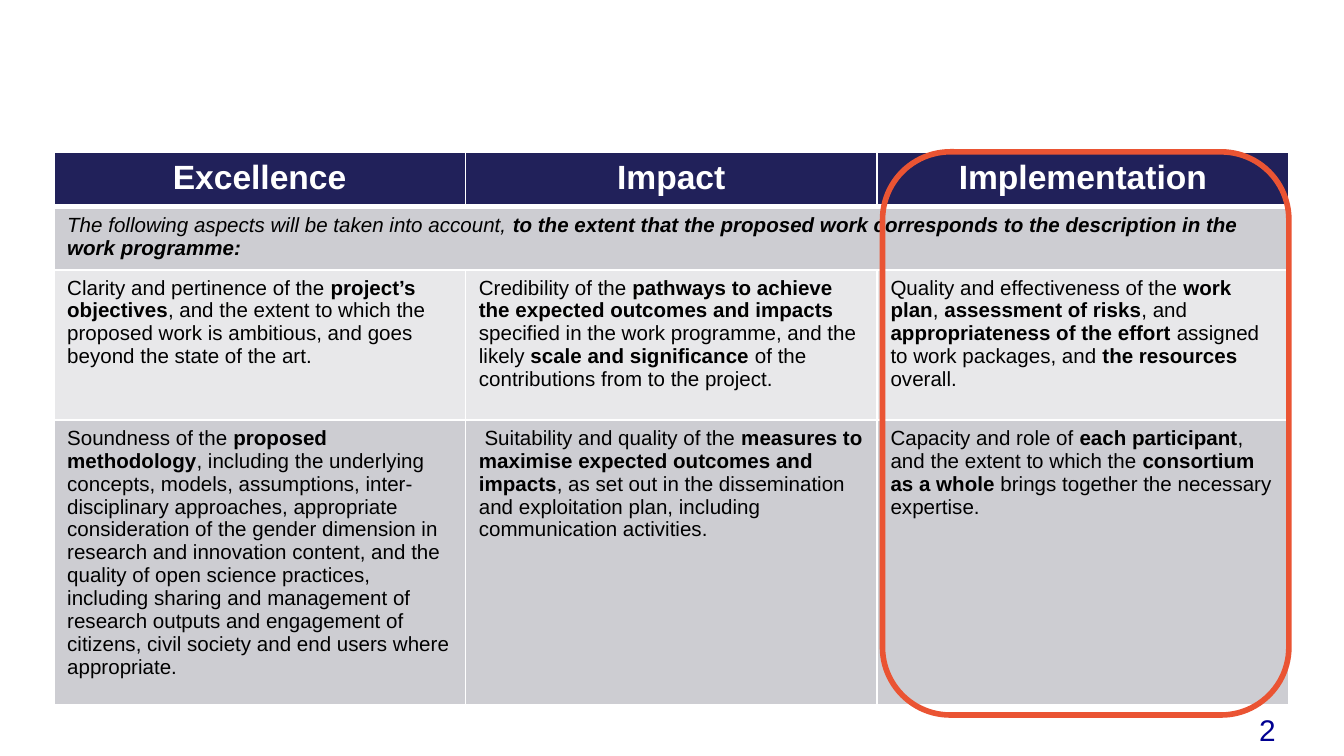
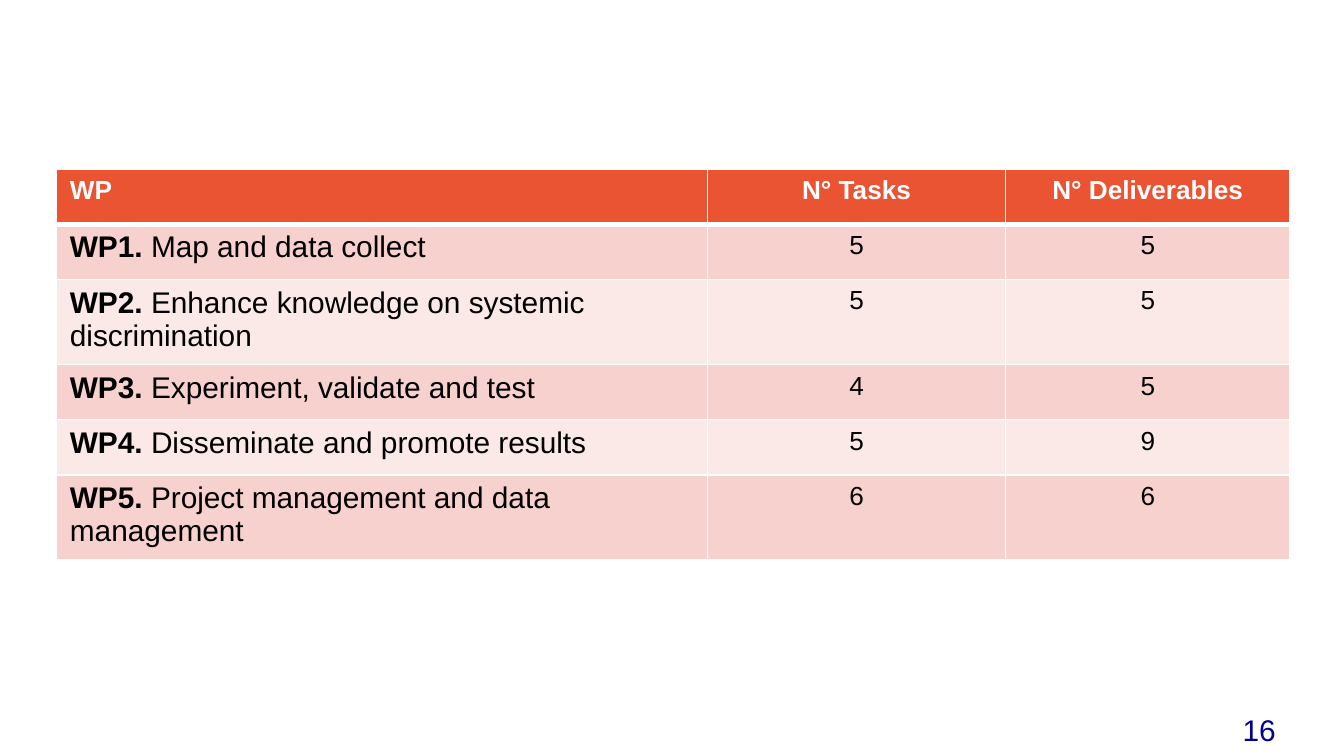
import pptx
import pptx.util
import pptx.dml.color
import pptx.enum.shapes
import pptx.enum.text
import pptx.oxml
import pptx.oxml.ns

Inches, Pt = pptx.util.Inches, pptx.util.Pt
RGBColor = pptx.dml.color.RGBColor
ALIGN = pptx.enum.text.PP_ALIGN
ANCHOR = pptx.enum.text.MSO_ANCHOR

WIDTH = 10
HEIGHT = WIDTH * 9 / 16
FONT = "Arial"
WHITE = RGBColor(0xFF, 0xFF, 0xFF)
BLACK = RGBColor(0, 0, 0)
BLUE = RGBColor(0x00, 0x00, 0x91)
NAVY = RGBColor(0x21, 0x21, 0x5A)
ORANGE = RGBColor(0xEA, 0x54, 0x33)
GREY_BANDS = (RGBColor(0xCD, 0xCD, 0xD2), RGBColor(0xE8, 0xE8, 0xEA))
PINK_BANDS = (RGBColor(0xF7, 0xD1, 0xCE), RGBColor(0xFB, 0xE9, 0xE8))

# Boxes: left, top, width, height in inches
NUMBER_BOX = (8.31, 5.24, 1.28, 0.38)
CRITERIA_BOX = (0.4, 1.13, 9.19, 4.19)
PACKAGES_BOX = (0.42, 1.26, 9.18, 2.89)
ROW = 0.41  # least row height; rows grow with their text

# Double asterisks switch bold on and off
CRITERIA = [
    ["Excellence", "Impact", "Implementation"],
    ["The following aspects will be taken into account, **to the extent that the "
     "proposed work corresponds to the description in the work programme:**"],
    ["Clarity and pertinence of the **project’s objectives**, and the extent to which "
     "the proposed work is ambitious, and goes beyond the state of the art.",
     "Credibility of the **pathways to achieve the expected outcomes and impacts "
     "**specified in the work programme, and the likely **scale and significance "
     "**of the contributions from to the project.",
     "Quality and effectiveness of the **work plan**, **assessment of risks**, and "
     "**appropriateness of the effort** assigned to work packages, and "
     "**the resources** overall."],
    ["Soundness of the **proposed methodology**, including the underlying concepts, "
     "models, assumptions, inter-disciplinary approaches, appropriate consideration of "
     "the gender dimension in research and innovation content, and the quality of open "
     "science practices, including sharing and management of research outputs and "
     "engagement of citizens, civil society and end users where appropriate.",
     " Suitability and quality of the **measures to maximise expected outcomes and "
     "impacts**, as set out in the dissemination and exploitation plan, including "
     "communication activities.",
     "Capacity and role of **each participant**, and the extent to which the "
     "**consortium as a whole** brings together the necessary expertise."],
]
PACKAGES = [
    ["WP", "N° Tasks", "N° Deliverables"],
    ["**WP1. **Map and data collect", "5", "5"],
    ["**WP2. **Enhance knowledge on systemic discrimination", "5", "5"],
    ["**WP3. **Experiment, validate and test", "4", "5"],
    ["**WP4. **Disseminate and promote results", "5", "9"],
    ["**WP5. **Project management and data management", "6", "6"],
]


def write(frame, text, size, color=BLACK, align=ALIGN.LEFT, bold=False, italic=False):
    """Fill the first paragraph, switching bold at each double asterisk."""
    para = frame.paragraphs[0]
    para.alignment = align
    for index, part in enumerate(text.split("**")):
        if not part:
            continue
        span = para.add_run()
        span.text = part
        span.font.color.rgb = color
        formats = {"name": FONT, "size": Pt(size), "italic": italic,
                   "bold": bold or index % 2 == 1}
        for key, value in formats.items():
            setattr(span.font, key, value)


def style_cell(cell, fill, top=1, bottom=1):
    """Draw white borders, then the fill."""
    properties = cell._tc.get_or_add_tcPr()
    for side, width in {"L": 1, "R": 1, "T": top, "B": bottom}.items():
        properties.append(pptx.oxml.parse_xml(
            f'<a:ln{side} {pptx.oxml.ns.nsdecls("a")} w="{Pt(width)}"><a:solidFill>'
            f'<a:srgbClr val="{WHITE}"/></a:solidFill></a:ln{side}>'))
    cell.fill.solid()
    cell.fill.fore_color.rgb = fill


def add_grid(page, box, columns, rows, header, bands):
    """Add a table whose columns share the width of the box by weight."""
    frame = page.shapes.add_table(len(rows), len(columns), *map(Inches, box))
    table = frame.table
    table.first_row = table.horz_banding = False
    for column, weight in zip(table.columns, columns):
        column.width = Inches(box[2] * weight / sum(columns))
    for number, (row, height) in enumerate(zip(table.rows, rows)):
        row.height = Inches(height)
        fill = bands[(number - 1) % 2] if number else header
        for cell in row.cells:
            style_cell(cell, fill, top=3 if number == 1 else 1,
                       bottom=1 if number else 3)
    frame.height = Inches(box[3])
    return table


def add_number(page, box, number):
    frame = page.shapes.add_textbox(*map(Inches, box)).text_frame
    frame.word_wrap = True
    frame.vertical_anchor = ANCHOR.MIDDLE
    write(frame, str(number), 16, BLUE, ALIGN.RIGHT)


def add_highlight(page, box):
    """Outline the last third of the box."""
    left, top, width, height = box
    inset = 0.04
    third = width / 3
    outline = page.shapes.add_shape(
        pptx.enum.shapes.MSO_SHAPE.ROUNDED_RECTANGLE, Inches(left + 2 * third + inset),
        Inches(top), Inches(third - inset), Inches(height))
    outline.shadow.inherit = False
    outline.fill.background()
    outline.line.color.rgb = ORANGE
    outline.line.width = Pt(3)


def criteria_page(page, box):
    table = add_grid(page, box, (1, 1, 1), (ROW, ROW, 1.12, ROW), NAVY, GREY_BANDS)
    table.cell(1, 0).merge(table.cell(1, 2))
    for row, texts in enumerate(CRITERIA):
        for column, text in enumerate(texts):
            frame = table.cell(row, column).text_frame
            if row == 0:
                write(frame, text, 18, WHITE, ALIGN.CENTER, bold=True)
            else:
                write(frame, text, 11, italic=row == 1)
    add_highlight(page, box)


def packages_page(page, box):
    rows = [ROW] * len(PACKAGES)
    table = add_grid(page, box, (4.85, 2.22, 2.12), rows, ORANGE, PINK_BANDS)
    for row, texts in enumerate(PACKAGES):
        for column, text in enumerate(texts):
            write(table.cell(row, column).text_frame, text,
                  16 if row and column == 0 else 14,
                  BLACK if row else WHITE,
                  ALIGN.CENTER if column else ALIGN.LEFT, bold=row == 0)


def main():
    deck = pptx.Presentation()
    deck.slide_width, deck.slide_height = Inches(WIDTH), Inches(HEIGHT)
    for number, build, box in ((2, criteria_page, CRITERIA_BOX),
                               (16, packages_page, PACKAGES_BOX)):
        page = deck.slides.add_slide(deck.slide_layouts[6])
        add_number(page, NUMBER_BOX, number)
        build(page, box)
    deck.save("out.pptx")


if __name__ == "__main__":
    main()
